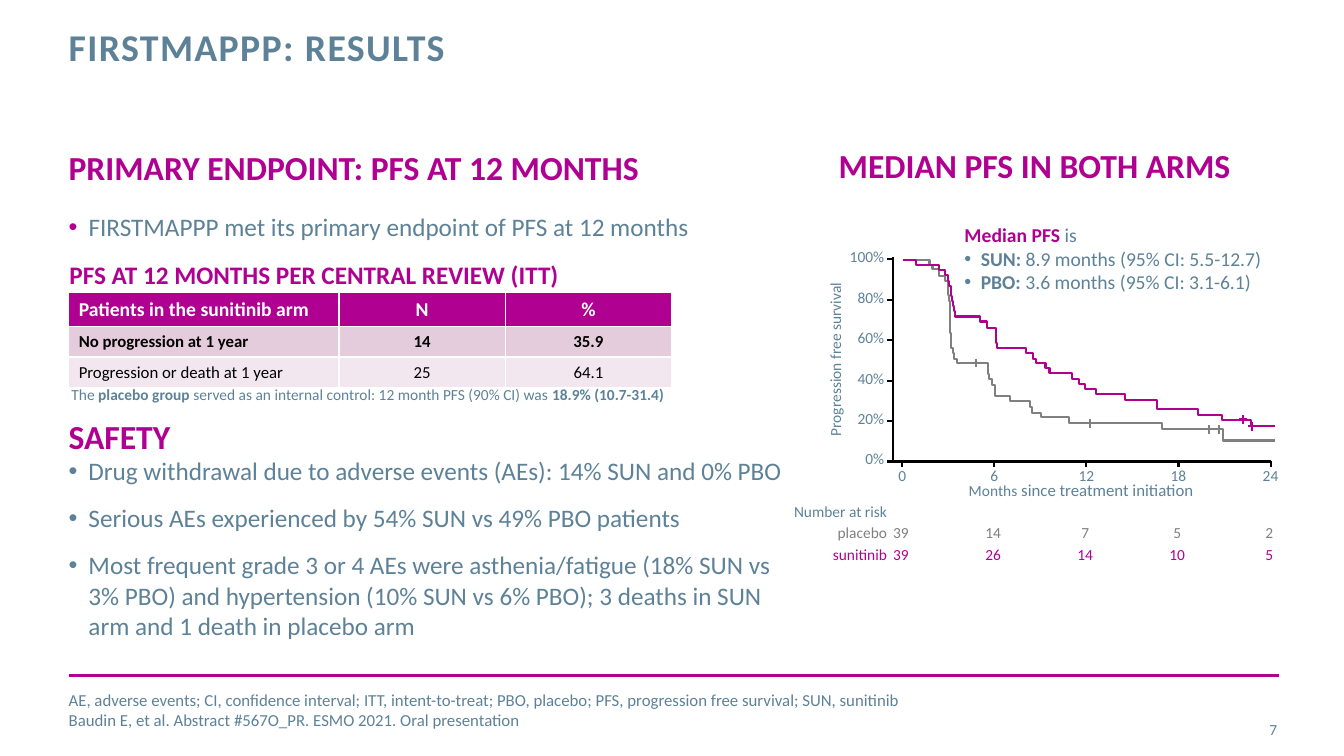
from lxml import etree
from pptx import Presentation
from pptx.dml.color import RGBColor
from pptx.enum.shapes import MSO_CONNECTOR
from pptx.enum.text import MSO_ANCHOR, MSO_AUTO_SIZE, PP_ALIGN
from pptx.oxml.ns import qn
from pptx.util import Cm, Pt

LEFT, MID, RIGHT = PP_ALIGN.LEFT, PP_ALIGN.CENTER, PP_ALIGN.RIGHT
TOP, MIDDLE = MSO_ANCHOR.TOP, MSO_ANCHOR.MIDDLE
NO_FIT = MSO_AUTO_SIZE.NONE
STRAIGHT = MSO_CONNECTOR.STRAIGHT

FONT = "Calibri"
SLATE, PINK, GREY = "5D8298", "B00091", "808080"
BLACK, WHITE = "000000", "FFFFFF"
BOLD, PLAIN = {"bold": True}, {"bold": False}

# Content: a paragraph is a string or a list of (text, format) runs
TITLE = "FIRSTMAPPP: RESULTS"
LEAD = "FIRSTMAPPP met its primary endpoint of PFS at 12 months"
FOOT = [[("AE, adverse events; CI, confidence interval; ITT, intent-to-treat; PBO, placebo; "
          "PFS, progression free survival; SUN, sunitinib", {}),
         ("\n", {}),
         ("Baudin E, et al. Abstract #567O_PR. ESMO 2021. Oral presentation", {})]]
HEADS = [  # text, box in cm, wrap
    ("PRIMARY ENDPOINT: PFS AT 12 MONTHS", (1.73, 3.56, 15.19, 1.27), True),
    ("SAFETY", (1.73, 10.36, 3.23, 1.27), True),
    ("MEDIAN PFS IN BOTH ARMS", (21.13, 3.53, 10.21, 1.27), False),
]
SAFETY = [
    "Drug withdrawal due to adverse events (AEs): 14% SUN and 0% PBO",
    "Serious AEs experienced by 54% SUN vs 49% PBO patients",
    "Most frequent grade 3 or 4 AEs were asthenia/fatigue (18% SUN vs 3% PBO) "
    "and hypertension (10% SUN vs 6% PBO); 3 deaths in SUN arm and 1 death in placebo arm",
]
ROWS = [
    ("Patients in the sunitinib arm", "N", "%"),
    ("No progression at 1 year", "14", "35.9"),
    ("Progression or death at 1 year", "25", "64.1"),
]
LOOKS = [  # fill, text format for each table row
    (PINK, {"size": 14, "color": WHITE, "bold": True}),
    ("E4CCDC", {"size": 12, "color": BLACK, "bold": True}),
    ("F2E7EE", {"size": 12, "color": BLACK, "bold": False}),
]
NOTE = [[("The ", {}), ("placebo group ", BOLD),
         ("served as an internal control: 12 month PFS (90% CI) was ", {}),
         ("18.9% (10.7-31.4)", BOLD)]]
MEDIAN = [[("Median PFS ", {"bold": True, "color": PINK}), ("is", {})]]
ARMS = [[("SUN: ", BOLD), ("8.9 months (95% CI: 5.5-12.7)", PLAIN)],
        [("PBO:", BOLD), (" 3.6 months (95% CI: 3.1-6.1)", PLAIN)]]
RISK = [("Number at risk", SLATE, []),
        ("placebo", GREY, [39, 14, 7, 5, 2]),
        ("sunitinib", PINK, [39, 26, 14, 10, 5])]

# Survival steps: (across, new level) in units of 0.0254 cm, then the end
UNIT = 0.0254
START, END = (896, 258), 1265
CURVES = [
    (GREY, [(922, 263), (925, 267), (931, 274), (937, 279), (940, 293), (941, 299),
            (942, 330), (943, 345), (945, 350), (946, 356), (949, 360), (980, 371),
            (981, 376), (984, 382), (987, 393), (1002, 398), (1022, 404), (1024, 410),
            (1033, 414), (1060, 420), (1153, 426), (1213, 437)],
     [(968, 360), (1081, 420), (1199, 426), (1209, 426)]),
    (PINK, [(909, 263), (931, 268), (937, 273), (940, 279), (941, 284), (943, 294),
            (944, 299), (945, 304), (946, 309), (947, 314), (972, 319), (979, 325),
            (988, 340), (989, 345), (1018, 350), (1025, 356), (1028, 360), (1037, 365),
            (1041, 370), (1063, 376), (1070, 381), (1076, 386), (1087, 391),
            (1116, 397), (1148, 406), (1188, 412), (1212, 417), (1241, 423)],
     [(1233, 416), (1242, 423)]),
]

prs = Presentation()
prs.slide_width, prs.slide_height = Cm(33.86), Cm(19.05)
slide = prs.slides.add_slide(prs.slide_layouts[3])
shapes = slide.shapes


def tint(code):
    return RGBColor.from_string(code)


def bullet(para, indent, color):
    props = para._p.get_or_add_pPr()
    props.set("marL", str(Cm(indent)))
    props.set("indent", str(-Cm(indent)))
    if not indent:
        etree.SubElement(props, qn("a:buNone"))
        return
    mark = etree.SubElement(props, qn("a:buClr"))
    etree.SubElement(mark, qn("a:srgbClr")).set("val", color)
    etree.SubElement(props, qn("a:buFont")).set("typeface", "Arial")
    etree.SubElement(props, qn("a:buChar")).set("char", "•")


def write(frame, paras, size=11, color=SLATE, bold=False, align=LEFT, indent=None,
          mark=SLATE, after=0, line=None, track=None, more=False):
    for i, runs in enumerate(paras):
        para = frame.add_paragraph() if i or more else frame.paragraphs[0]
        if indent is not None:
            bullet(para, indent, mark)
        para.alignment = align
        para.space_before, para.space_after = Pt(0), Pt(after)
        if line:
            para.line_spacing = Pt(line)
        for text, own in [(runs, {})] if isinstance(runs, str) else runs:
            if text == "\n":
                para.add_line_break()
                continue
            run = para.add_run()
            run.text = text
            font = run.font
            font.name, font.size = FONT, Pt(own.get("size", size))
            font.bold = own.get("bold", bold)
            font.color.rgb = tint(own.get("color", color))
            if track:
                run._r.get_or_add_rPr().set("spc", str(track))


def setup(shape, pads, anchor=TOP, wrap=True):
    frame = shape.text_frame
    frame.auto_size, frame.word_wrap, frame.vertical_anchor = NO_FIT, wrap, anchor
    (frame.margin_left, frame.margin_top,
     frame.margin_right, frame.margin_bottom) = map(Cm, pads)
    return frame


def label(paras, box, pads=(0.25, 0.13, 0.25, 0.13), anchor=TOP, wrap=True, turn=0, **form):
    shape = shapes.add_textbox(*map(Cm, box))
    shape.rotation = turn
    frame = setup(shape, pads, anchor, wrap)
    write(frame, [paras] if isinstance(paras, str) else paras, **form)
    return frame


def fill_in(holder, paras, box, anchor=TOP, **form):
    holder.left, holder.top, holder.width, holder.height = map(Cm, box)
    write(setup(holder, (0, 0, 0, 0), anchor), paras, **form)


def rule(x1, y1, x2, y2, color=BLACK, width=1.5):
    line = shapes.add_connector(STRAIGHT, Cm(x1), Cm(y1), Cm(x2), Cm(y2))
    line.line.color.rgb, line.line.width = tint(color), Pt(width)
    etree.SubElement(line._element.spPr, qn("a:effectLst"))


# Title, lead bullet, footnote and page number
rule(1.73, 17.02, 32.21, 17.02, PINK, 2)
fill_in(shapes.title, [TITLE], (1.73, 0.69, 24.28, 2.24), size=27, bold=True, line=30, track=100)
fill_in(slide.placeholders[1], [LEAD], (1.73, 5.33, 17.15, 1.12), size=18, indent=0.5, mark=PINK)
fill_in(slide.placeholders[2], FOOT, (1.73, 17.37, 30, 1.02), MIDDLE, size=12, indent=0, after=6)
label("7", (30, 17.86, 2.18, 1.02), (0, 0, 0, 0), MIDDLE, align=RIGHT)

# Headings and safety list
FLUSH = (0, 0.13, 0.25, 0.13)
for text, box, wrap in HEADS:
    label(text, box, FLUSH, wrap=wrap, size=24, color=PINK, bold=True)
label(SAFETY, (1.73, 11.35, 18.52, 4.95), FLUSH, size=18, indent=0.5, after=12)

# Table with its heading and note
label("PFS AT 12 MONTHS PER CENTRAL REVIEW (ITT)", (1.5, 6.4, 17.86, 1.02),
      size=18, color=PINK, bold=True)
table = shapes.add_table(3, 3, Cm(1.73), Cm(7.37), Cm(15.19), Cm(2.07)).table
for col, width in zip(table.columns, (6.81, 4.19, 4.19)):
    col.width = Cm(width)
for r, (row, (fill, form)) in enumerate(zip(ROWS, LOOKS)):
    for c, text in enumerate(row):
        cell = table.cell(r, c)
        cell.fill.solid()
        cell.fill.fore_color.rgb = tint(fill)
        write(cell.text_frame, [text], align=MID if c else LEFT, **form)
label(NOTE, (1.55, 9.58, 16.51, 0.74))

# Axes with ticks and labels
X0, Y0, XGAP, YGAP = 22.73, 11.63, 2.32, 1.02
rule(22.5, 6.48, 22.5, 11.66)
rule(22.43, Y0, 32.03, Y0)
for i in range(6):
    y = Y0 - i * YGAP
    rule(22.35, y, 22.5, y)
    label(f"{i * 20}%", (21.03, y - 0.43, 1.5, 0.74), align=RIGHT)
for i in range(5):
    x = X0 + i * XGAP
    rule(x, 11.61, x, 11.76)
    label(str(i * 6), (x - 0.5, 11.61, 1, 0.74), align=MID)
label([[("Months", {}), (" since treatment initiation", {"size": 12})]],
      (22.45, 11.96, 9.58, 0.76), align=MID)
label("Progression free survival", (18.49, 8.69, 5.11, 0.74), (0, 0.13, 0, 0.13),
      turn=270, align=MID)

# Number at risk
for r, (name, color, counts) in enumerate(RISK):
    y = 12.52 + r * 0.54
    label(name, (19.25, y, 3.35, 0.74), color=color, align=RIGHT)
    for i, count in enumerate(counts):
        label(str(count), (X0 + i * XGAP - 0.53, y, 1, 0.74), color=color, align=MID)

# Survival curves with censor marks
for color, steps, marks in CURVES:
    for x, y in marks:
        x, y = x * UNIT, y * UNIT
        rule(x, y - 0.11, x, y + 0.11, color)
        rule(x - 0.11, y, x + 0.11, y, color)
    path, level = [], START[1]
    for x, y in steps:
        path += [(x, level), (x, y)]
        level = y
    pen = shapes.build_freeform(*START, scale=Cm(UNIT))
    pen.add_line_segments(path + [(END, level)], close=False)
    curve = pen.convert_to_shape()
    curve.fill.background()
    curve.line.color.rgb, curve.line.width = tint(color), Pt(1.5)
    curve.shadow.inherit = False

# Median note
frame = label(MEDIAN, (24.05, 5.49, 8.94, 2.06), size=14)
write(frame, ARMS, size=14, indent=0.41, more=True)

prs.save("out.pptx")
